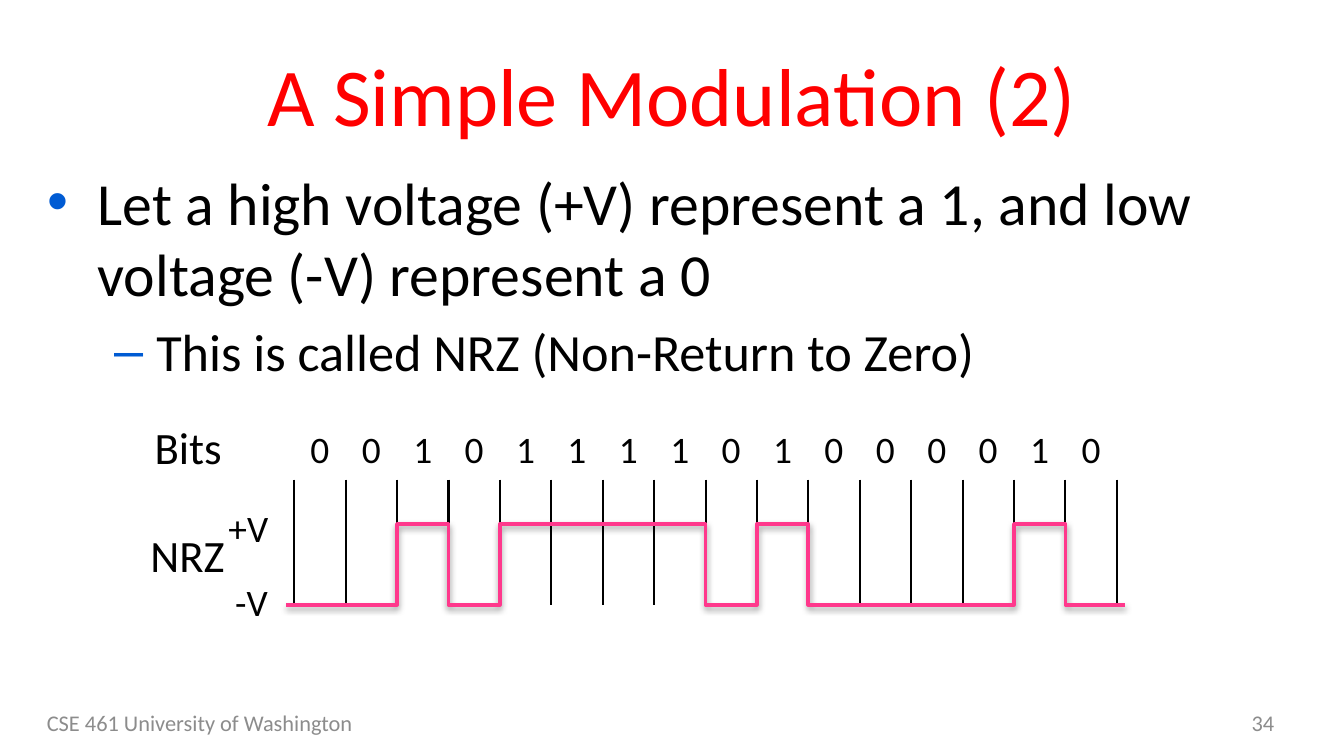
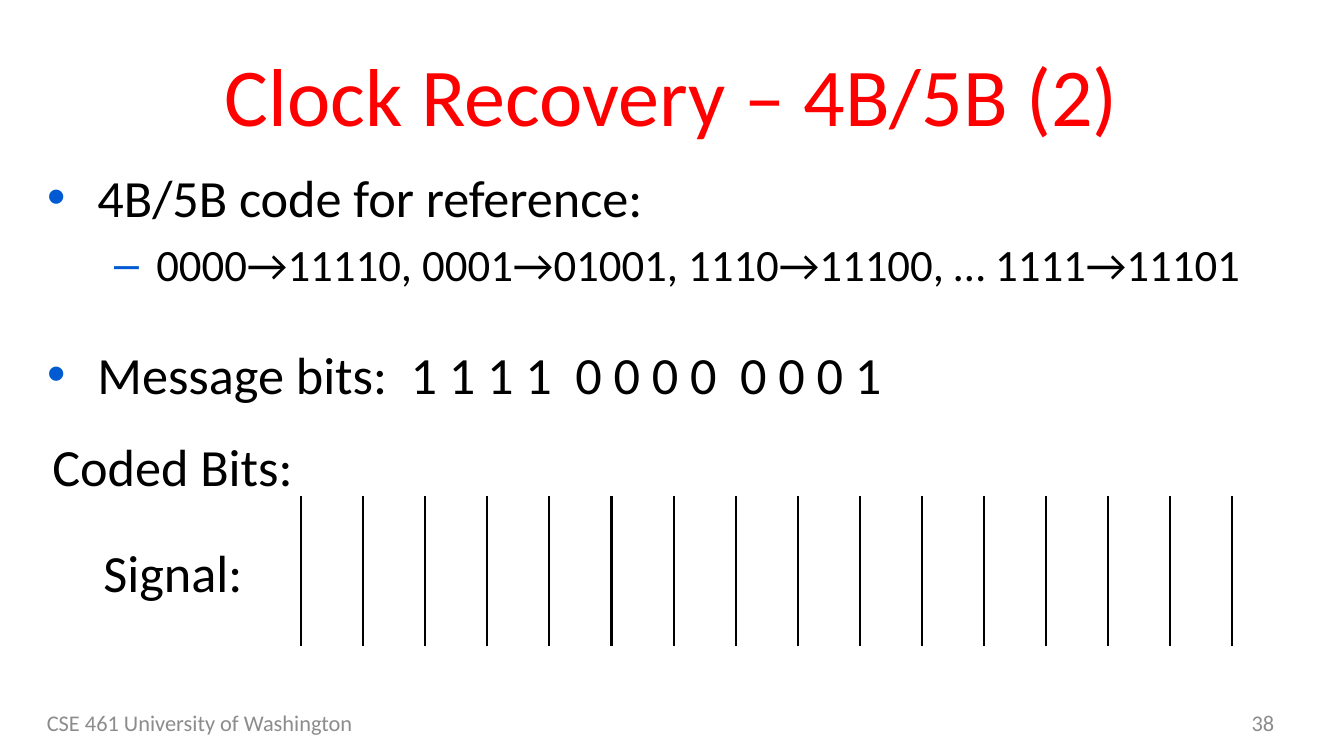
"""Build two lecture slides on signal modulation and clock recovery."""
from lxml import etree
from pptx import Presentation
from pptx.dml.color import RGBColor
from pptx.enum.shapes import MSO_CONNECTOR
from pptx.enum.text import MSO_ANCHOR, MSO_AUTO_SIZE, PP_ALIGN
from pptx.oxml.ns import qn
from pptx.util import Inches, Pt

STRAIGHT = MSO_CONNECTOR.STRAIGHT
MIDDLE, TOP = MSO_ANCHOR.MIDDLE, MSO_ANCHOR.TOP
NO_FIT = MSO_AUTO_SIZE.NONE
LEFT, CENTER, RIGHT = PP_ALIGN.LEFT, PP_ALIGN.CENTER, PP_ALIGN.RIGHT
FONT = "Calibri"
RED, BLACK, GRAY, PINK, BLUE = "FF0000", "000000", "8C8C8C", "FF388C", "005BD3"
FOOTER = "CSE 461 University of Washington"
BITS = "0010111101000010"
WORD_GAP = 6.3


def color(value):
    return RGBColor.from_string(value)


def place(shape, left, top, width, height):
    frame = {"left": left, "top": top, "width": width, "height": height}
    for name, value in frame.items():
        setattr(shape, name, Inches(value))


def add_span(para, text, size, shade=BLACK):
    span = para.add_run()
    span.text = text
    for name, value in {"name": FONT, "size": Pt(size)}.items():
        setattr(span.font, name, value)
    span.font.color.rgb = color(shade)
    return span


def add_label(page, text, area, size, shade=BLACK, align=LEFT, anchor=TOP, inset=(0, 0), wrap=False):
    box = page.shapes.add_textbox(*map(Inches, area))
    across, down = map(Inches, inset)
    style = {"word_wrap": wrap, "vertical_anchor": anchor,
             "margin_left": across, "margin_right": across,
             "margin_top": down, "margin_bottom": down}
    for name, value in style.items():
        setattr(box.text_frame, name, value)
    para = box.text_frame.paragraphs[0]
    para.alignment = align
    add_span(para, text, size, shade)


def add_page(deck, title, number):
    page = deck.slides.add_slide(deck.slide_layouts[1])
    heading, body = page.shapes.title, page.placeholders[1]
    place(heading, 0.25, 0.23, 9.5, 0.94)
    place(body, 0.25, 1.18, 9.5, 3.71)
    for holder in (heading, body):
        holder.text_frame.auto_size = NO_FIT
    heading.text_frame.vertical_anchor = MIDDLE
    para = heading.text_frame.paragraphs[0]
    para.alignment = CENTER
    add_span(para, title, 44, RED)
    footer_style = {"size": 12, "shade": GRAY, "anchor": MIDDLE, "inset": (0.1, 0.05), "wrap": True}
    add_label(page, FOOTER, (0.25, 5.23, 3.17, 0.3), **footer_style)
    add_label(page, str(number), (7.25, 5.23, 2.33, 0.3), align=RIGHT, **footer_style)
    return page


def fill_list(page, items):
    """Write (level, size, space before, pieces of text) items with blue bullets."""
    frame = page.placeholders[1].text_frame
    for index, (level, size, before, pieces) in enumerate(items):
        para = frame.add_paragraph() if index else frame.paragraphs[0]
        para.level = level
        para.space_before = Pt(before)
        bullet = etree.SubElement(para._p.get_or_add_pPr(), qn("a:buClr"))
        etree.SubElement(bullet, qn("a:srgbClr"), val=BLUE)
        for order, piece in enumerate(pieces):
            if order:
                gap = add_span(para, " ", size)
                gap._r.get_or_add_rPr().set("spc", str(round(WORD_GAP * 100)))
            add_span(para, piece, size)


def add_ticks(page, left, step, count, top, bottom):
    for index in range(count):
        x = Inches(left + index * step)
        tick = page.shapes.add_connector(STRAIGHT, x, Inches(top), x, Inches(bottom))
        tick.line.color.rgb = color(BLACK)
        tick.line.width = Pt(1.13)
        etree.SubElement(tick._element.spPr, qn("a:effectLst"))


def add_shadow(shape):
    effects = shape._element.spPr.find(qn("a:effectLst"))
    shadow = etree.SubElement(effects, qn("a:outerShdw"), blurRad=str(Pt(3.1)),
                              dist=str(Pt(1.6)), dir="5400000", rotWithShape="0")
    shade = etree.SubElement(shadow, qn("a:srgbClr"), val=BLACK)
    etree.SubElement(shade, qn("a:alpha"), val="38000")


def add_signal(page, left, step, high, low, overhang):
    level = {"0": low, "1": high}
    points = [(left - overhang, level[BITS[0]])]
    for index in range(1, len(BITS)):
        before, after = BITS[index - 1:index + 1]
        if before != after:
            x = left + index * step
            points += [(x, level[before]), (x, level[after])]
    points.append((left + len(BITS) * step + overhang, level[BITS[-1]]))
    corners = [(Inches(x), Inches(y)) for x, y in points]
    builder = page.shapes.build_freeform(*corners[0])
    builder.add_line_segments(corners[1:], close=False)
    wave = builder.convert_to_shape()
    wave.fill.background()
    wave.line.color.rgb = color(PINK)
    wave.line.width = Pt(2)
    wave.shadow.inherit = False
    add_shadow(wave)


def build_modulation(deck):
    page = add_page(deck, "A Simple Modulation (2)", 34)
    fill_list(page, [
        (0, 32, 0, ["Let a high voltage (+V) represent a 1, and low voltage (-V) represent a 0"]),
        (1, 28, 5.6, ["This is called NRZ (Non-Return to Zero)"]),
    ])
    left, right = 2.19, 8.31
    step = (right - left) / len(BITS)
    add_label(page, "Bits", (1.15, 3.12, 0.5, 0.4), 24)
    add_label(page, "NRZ", (1.12, 3.93, 0.56, 0.4), 24)
    for index, bit in enumerate(BITS):
        add_label(page, bit, (left + 0.12 + index * step, 3.17, 0.14, 0.34), 20)
    add_ticks(page, left, step, len(BITS) + 1, 3.57, 4.5)
    add_signal(page, left, step, 3.9, 4.5, 0.06)
    add_label(page, "+V", (1.7, 3.76, 0.3, 0.34), 20)
    add_label(page, "-V", (1.75, 4.31, 0.25, 0.34), 20)


def build_clock_recovery(deck):
    page = add_page(deck, "Clock Recovery – 4B/5B (2)", 38)
    fill_list(page, [
        (0, 28, 0, ["4B/5B code for reference:"]),
        (1, 24, 4.8, ["0000→11110, 0001→01001, 1110→11100, … 1111→11101"]),
        (0, 28, 27.5, ["Message bits:", "1 1 1 1", "0 0 0 0", "0 0 0 1"]),
    ])
    left, right, count = 2.24, 9.17, 16
    add_ticks(page, left, (right - left) / (count - 1), count, 3.69, 4.81)
    add_label(page, "Coded Bits:", (0.39, 3.23, 1.81, 0.47), 28)
    add_label(page, "Signal:", (0.77, 4.02, 1.04, 0.47), 28)


def main():
    deck = Presentation()
    deck.slide_width = Inches(10)
    deck.slide_height = deck.slide_width * 9 // 16
    build_modulation(deck)
    build_clock_recovery(deck)
    deck.save("out.pptx")


if __name__ == "__main__":
    main()
